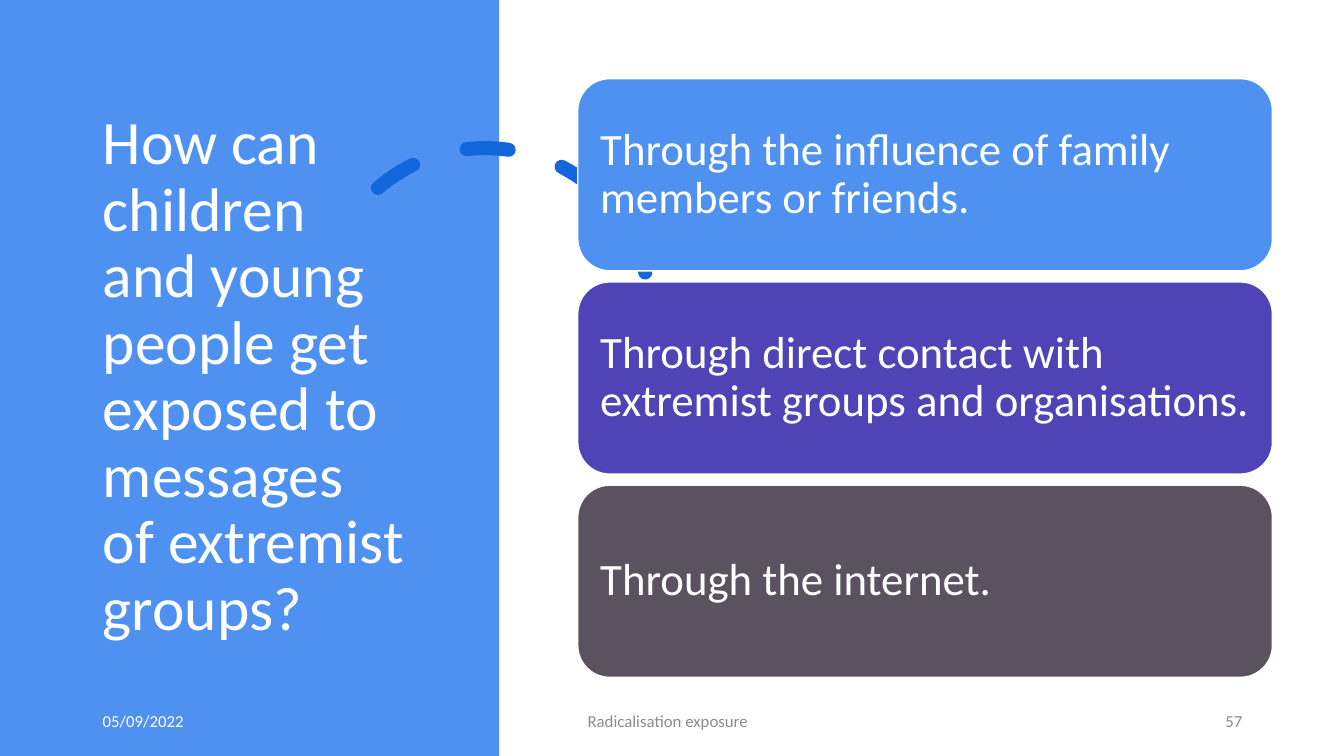
from dataclasses import dataclass

from pptx import Presentation
from pptx.dml.color import RGBColor
from pptx.enum.dml import MSO_LINE
from pptx.enum.shapes import MSO_SHAPE
from pptx.enum.text import MSO_ANCHOR, MSO_AUTO_SIZE, PP_ALIGN
from pptx.util import Inches, Pt

ARC, RECT, ROUNDED = MSO_SHAPE.ARC, MSO_SHAPE.RECTANGLE, MSO_SHAPE.ROUNDED_RECTANGLE
LEFT, RIGHT = PP_ALIGN.LEFT, PP_ALIGN.RIGHT
MIDDLE, NO_FIT, DASH = MSO_ANCHOR.MIDDLE, MSO_AUTO_SIZE.NONE, MSO_LINE.DASH
WIDTH, HEIGHT = 13.33, 7.5
TITLE_ONLY = 5


@dataclass(frozen=True)
class Theme:
    """Colours, font and type sizes of the slide."""
    font: str = "Calibri"
    white: str = "FFFFFF"
    blue: str = "4E91F0"
    deep_blue: str = "1366DC"
    violet: str = "5043B5"
    slate: str = "5B5260"
    grey: str = "8C8C8C"
    title: int = 44
    body: int = 32
    small: int = 12


THEME = Theme()


def set_text(sp, text, size, color=THEME.white, align=LEFT, spacing=0.9, after=0, margin=None):
    """Write one formatted paragraph into a shape."""
    tf = sp.text_frame
    tf.word_wrap = True
    tf.auto_size = NO_FIT
    tf.vertical_anchor = MIDDLE
    if margin is not None:
        tf.margin_left = tf.margin_right = tf.margin_top = tf.margin_bottom = Inches(margin)
    p = tf.paragraphs[0]
    p.alignment = align
    p.line_spacing = spacing
    p.space_before, p.space_after = Pt(0), Pt(after)
    r = p.add_run()
    r.text = text
    r.font.name = THEME.font
    r.font.size = Pt(size)
    r.font.color.rgb = RGBColor.from_string(color)


def add_block(s, kind, box, fill=None, line=None, weight=1):
    """Add a flat shape with optional fill and outline."""
    sp = s.shapes.add_shape(kind, *map(Inches, box))
    sp.shadow.inherit = False
    for paint, color in ((sp.fill, fill), (sp.line.fill, line)):
        if color:
            paint.solid()
            paint.fore_color.rgb = RGBColor.from_string(color)
        else:
            paint.background()
    if line:
        sp.line.width = Pt(weight)
    return sp


def add_title_panel(s, box, text):
    """Fill the side panel and set the title inside it."""
    left, top, width, height = box
    add_block(s, RECT, box, THEME.blue)
    add_dashed_arc(s, (left + 3.18, top + 1.47, 3.27, 3.27))
    title = s.shapes.title
    s.shapes.element.append(title.element)
    title.left, title.top = Inches(left + 0.92), Inches(top + 0.7)
    title.width, title.height = Inches(width - 1.72), Inches(height - 1.41)
    set_text(title, text, THEME.title)


def add_dashed_arc(s, box):
    """Draw the round-capped dashed arc."""
    sp = add_block(s, ARC, box, line=THEME.deep_blue, weight=10)
    sp.rotation = 345.8
    sp.adjustments[0], sp.adjustments[1] = 146.129, 0
    sp.line.dash_style = DASH
    sp.line.fill
    sp.line._get_or_add_ln().set("cap", "rnd")


def add_cards(s, box, cards, gap=0.11):
    """Stack equal rounded cards in the box."""
    left, top, width, height = box
    card_height = (height - gap * (len(cards) - 1)) / len(cards)
    for i, (text, fill) in enumerate(cards):
        y = top + i * (card_height + gap)
        sp = add_block(s, ROUNDED, (left, y, width, card_height), fill, THEME.white)
        set_text(sp, text, THEME.body, margin=0.13)


def add_footer(s, box, items):
    """Place footer texts by offset and width along the box."""
    left, top, _, height = box
    for text, offset, width, color, align in items:
        sp = s.shapes.add_textbox(*map(Inches, (left + offset, top, width, height)))
        set_text(sp, text, THEME.small, color, align, spacing=1, after=6)


def main():
    """Build and save the slide."""
    prs = Presentation()
    prs.slide_width, prs.slide_height = Inches(WIDTH), Inches(HEIGHT)
    s = prs.slides.add_slide(prs.slide_layouts[TITLE_ONLY])
    add_title_panel(
        s, (0, 0, 4.95, HEIGHT),
        "How can children and young people get exposed to messages of extremist groups?")
    add_footer(s, (0.92, 6.95, 11.5, 0.4), [
        ("05/09/2022", 0, 3, THEME.white, LEFT),
        ("Radicalisation exposure", 4.81, 4.64, THEME.grey, LEFT),
        ("57", 9.65, 1.85, THEME.grey, RIGHT),
    ])
    add_cards(s, (5.73, 0.78, 6.89, 5.94), [
        ("Through the influence of family members or friends.", THEME.blue),
        ("Through direct contact with extremist groups and organisations.", THEME.violet),
        ("Through the internet.", THEME.slate),
    ])
    prs.save("out.pptx")


if __name__ == "__main__":
    main()
